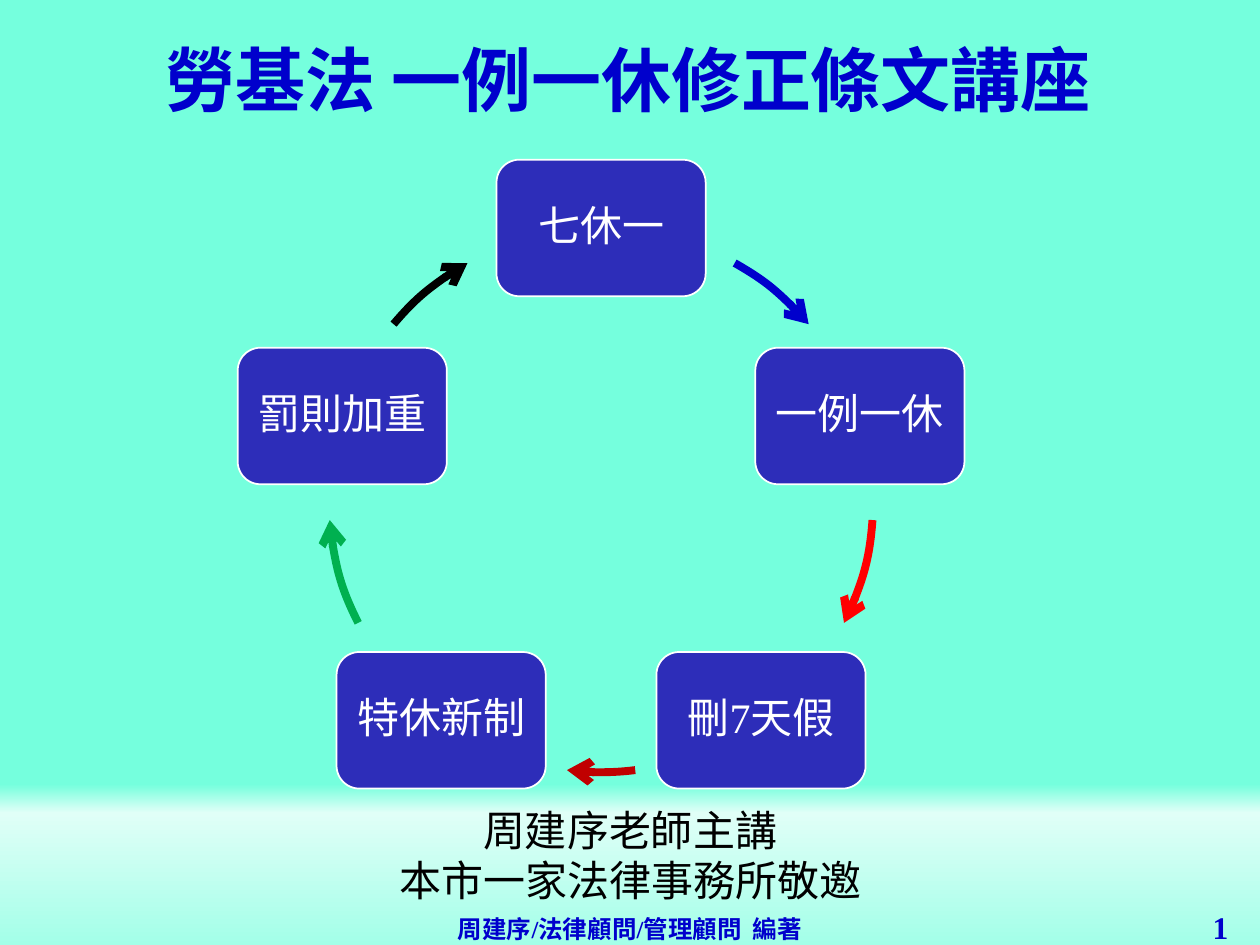
from copy import deepcopy
from math import cos, radians, sin

from pptx import Presentation
from pptx.dml.color import RGBColor
from pptx.enum.shapes import MSO_SHAPE as Shape
from pptx.enum.text import MSO_ANCHOR as Anchor, PP_ALIGN as Align
from pptx.oxml.ns import qn
from pptx.oxml.xmlchemy import OxmlElement
from pptx.util import Pt

CENTER_X, CENTER_Y, RADIUS = 343.5, 285.8, 155.5
NODE_WIDTH, NODE_HEIGHT = 119.5, 78
BLUE = "0000CC"

BACKGROUND_STOPS = [(74, "75FFDD"), (83, "75FFDD"), (86, "E0FFF7"), (100, "A3FFE8")]
TOPICS = ["七休一", "一例一休", "刪7天假", "特休新制", "罰則加重"]
# Start angle, end angle (clockwise from the right) and colour
ARROWS = [
    (299.4, 319.7, BLUE),
    (4.2, 26.8, "FF0000"),
    (82.8, 97.2, "C00000"),
    (153.2, 175.8, "00B050"),
    (220.3, 240.6, "000000"),
]


def color(hex_string):
    return RGBColor.from_string(hex_string)


class SlideBuilder:
    font_name = "Times New Roman"
    node_fill = "2D2DB9"
    node_text = "FFFFFF"

    def __init__(self, slide):
        self.slide = slide

    def background(self, stops):
        fill = self.slide.background.fill
        fill.gradient()
        fill.gradient_angle = 270
        stop_list = next(self.slide.element.iter(qn("a:gsLst")))
        for _ in range(len(stops) - len(stop_list)):
            stop_list.append(deepcopy(stop_list[0]))
        for stop, (percent, hex_string) in zip(fill.gradient_stops, stops):
            stop.position = percent / 100
            stop.color.rgb = color(hex_string)

    def style(self, paragraph, size, hex_string, bold=False, align=Align.CENTER, font=None):
        paragraph.alignment = align
        paragraph.font.name = font or self.font_name
        paragraph.font.size = Pt(size)
        paragraph.font.bold = bold
        paragraph.font.color.rgb = color(hex_string)

    def text(self, box, lines, size, hex_string, anchor=Anchor.TOP, **style):
        shape = self.slide.shapes.add_textbox(*map(Pt, box))
        frame = shape.text_frame
        frame.word_wrap = True
        frame.vertical_anchor = anchor
        frame.text = "\n".join(lines)
        for paragraph in frame.paragraphs:
            self.style(paragraph, size, hex_string, **style)

    def node(self, label, angle):
        """Place a rounded box centred on the circle at the given angle."""
        left = CENTER_X + RADIUS * cos(radians(angle)) - NODE_WIDTH / 2
        top = CENTER_Y + RADIUS * sin(radians(angle)) - NODE_HEIGHT / 2
        shape = self.slide.shapes.add_shape(
            Shape.ROUNDED_RECTANGLE, Pt(left), Pt(top), Pt(NODE_WIDTH), Pt(NODE_HEIGHT))
        shape.shadow.inherit = False
        shape.fill.solid()
        shape.fill.fore_color.rgb = color(self.node_fill)
        shape.line.color.rgb = color("FFFFFF")
        shape.line.width = Pt(1)
        frame = shape.text_frame
        frame.word_wrap = True
        frame.vertical_anchor = Anchor.MIDDLE
        frame.margin_left = frame.margin_right = Pt(7.2)
        frame.margin_top = frame.margin_bottom = Pt(7.2)
        frame.text = label
        paragraph = frame.paragraphs[0]
        paragraph.line_spacing = 0.9
        paragraph.space_after = Pt(8.4)
        self.style(paragraph, 24, self.node_text)

    def arc_arrow(self, start, end, hex_string):
        shape = self.slide.shapes.add_shape(
            Shape.ARC, Pt(CENTER_X - RADIUS), Pt(CENTER_Y - RADIUS),
            Pt(2 * RADIUS), Pt(2 * RADIUS))
        # Angles are stored in 60000ths of a degree, adjustments in 100000ths
        shape.adjustments[0] = start * 0.6
        shape.adjustments[1] = end * 0.6
        shape.shadow.inherit = False
        shape.fill.background()
        shape.line.color.rgb = color(hex_string)
        shape.line.width = Pt(4.5)
        head = OxmlElement("a:tailEnd")
        head.set("type", "arrow")
        shape.line._get_or_add_ln().append(head)


def main():
    presentation = Presentation()
    presentation.slide_width = Pt(720)
    presentation.slide_height = Pt(540)
    builder = SlideBuilder(presentation.slides.add_slide(presentation.slide_layouts[6]))

    builder.background(BACKGROUND_STOPS)
    for index, (topic, arrow) in enumerate(zip(TOPICS, ARROWS)):
        builder.node(topic, -90 + index * 360 / len(TOPICS))
        builder.arc_arrow(*arrow)

    builder.text((246, 519, 228, 21), ["周建序/法律顧問/管理顧問  編著"], 14, BLUE, bold=True)
    builder.text((562, 515.5, 147, 14), ["1"], 18, BLUE, bold=True, align=Align.RIGHT)
    builder.text((0, 1.5, 718, 86.5), ["勞基法 一例一休修正條文講座"], 40, BLUE,
                 anchor=Anchor.MIDDLE, bold=True)
    builder.text((197, 456, 326, 65.5), ["周建序老師主講", "本市一家法律事務所敬邀"],
                 24, "000000", font="Noto Sans CJK SC")

    presentation.save("out.pptx")


if __name__ == "__main__":
    main()
